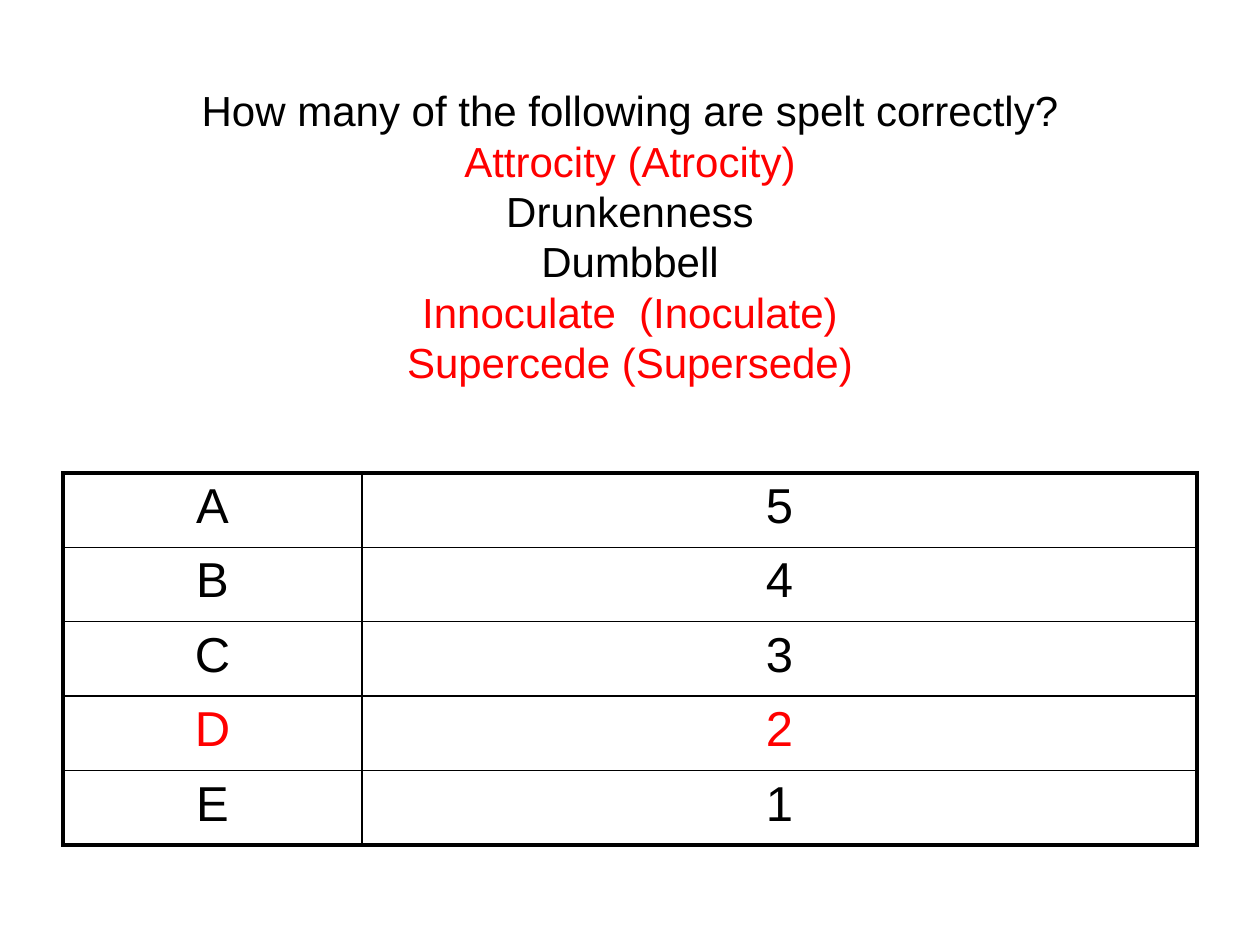
from dataclasses import dataclass

from lxml import etree
from pptx import Presentation
from pptx.dml.color import RGBColor
from pptx.enum.text import MSO_ANCHOR, MSO_AUTO_SIZE, PP_ALIGN
from pptx.oxml.ns import qn
from pptx.util import Emu, Pt

CENTER = PP_ALIGN.CENTER
MIDDLE, TOP = MSO_ANCHOR.MIDDLE, MSO_ANCHOR.TOP
TITLE_ONLY = 5


@dataclass(frozen=True)
class Theme:
    font: str = "Arial"
    ink: str = "000000"
    highlight: str = "FF0000"
    title_size: int = 24
    cell_size: int = 28
    outer_line: float = 2.25
    inner_line: float = 1


THEME = Theme()

# Each entry: text, whether it is highlighted
QUESTION_LINES = [
    ("How many of the following are spelt correctly?", False),
    ("Attrocity (Atrocity)", True),
    ("Drunkenness", False),
    ("Dumbbell", False),
    ("Innoculate  (Inoculate)", True),
    ("Supercede (Supersede)", True),
]
ANSWERS = [("A", "5"), ("B", "4"), ("C", "3"), ("D", "2"), ("E", "1")]
CORRECT = "D"

SLIDE_SIZE = (1260, 945)
TITLE_BOX = (63, 38, 1134, 396)
TABLE_BOX = (63, 473, 1134, 372)
COLUMN_WIDTHS = (299, 835)


def px(value):
    return Emu(round(value * 914400 / 126))


def write(frame, lines, size, anchor=TOP):
    """Fill a text frame with one centred paragraph of broken lines."""
    frame.word_wrap = True
    frame.vertical_anchor = anchor
    para = frame.paragraphs[0]
    para.alignment = CENTER
    for index, (text, highlighted) in enumerate(lines):
        if index:
            para.add_line_break()
        span = para.add_run()
        span.text = text
        span.font.name = THEME.font
        span.font.size = Pt(size)
        span.font.color.rgb = RGBColor.from_string(
            THEME.highlight if highlighted else THEME.ink)
    return para


def space_before_percent(para, percent):
    spacing = etree.Element(qn("a:spcBef"))
    etree.SubElement(spacing, qn("a:spcPct"), val=str(percent * 1000))
    para._p.get_or_add_pPr().insert(0, spacing)


def set_borders(cell, widths):
    """Draw cell borders from a dict of side letter to width in points."""
    properties = cell._tc.get_or_add_tcPr()
    for index, (side, width) in enumerate(widths.items()):
        line = etree.Element(qn(f"a:ln{side}"), w=str(Pt(width)))
        fill = etree.SubElement(line, qn("a:solidFill"))
        etree.SubElement(fill, qn("a:srgbClr"), val=THEME.ink)
        properties.insert(index, line)


def add_question(slide):
    title = slide.shapes.title
    title.left, title.top, title.width, title.height = map(px, TITLE_BOX)
    write(title.text_frame, QUESTION_LINES, THEME.title_size, MIDDLE)
    title.text_frame.auto_size = MSO_AUTO_SIZE.NONE


def add_answers(slide):
    last_row, last_column = len(ANSWERS) - 1, len(COLUMN_WIDTHS) - 1
    table = slide.shapes.add_table(
        len(ANSWERS), len(COLUMN_WIDTHS), *map(px, TABLE_BOX)).table
    table.first_row = table.horz_banding = False
    for column, width in zip(table.columns, COLUMN_WIDTHS):
        column.width = px(width)
    for row_index, answer in enumerate(ANSWERS):
        table.rows[row_index].height = px(TABLE_BOX[3] / len(ANSWERS))
        for column_index, text in enumerate(answer):
            cell = table.cell(row_index, column_index)
            cell.fill.background()
            para = write(cell.text_frame, [(text, answer[0] == CORRECT)],
                         THEME.cell_size)
            space_before_percent(para, 20)
            on_edge = {
                "L": column_index == 0,
                "R": column_index == last_column,
                "T": row_index == 0,
                "B": row_index == last_row,
            }
            set_borders(cell, {
                side: THEME.outer_line if outer else THEME.inner_line
                for side, outer in on_edge.items()})


def main():
    deck = Presentation()
    deck.slide_width, deck.slide_height = map(px, SLIDE_SIZE)
    slide = deck.slides.add_slide(deck.slide_layouts[TITLE_ONLY])
    add_question(slide)
    add_answers(slide)
    deck.save("out.pptx")


if __name__ == "__main__":
    main()
